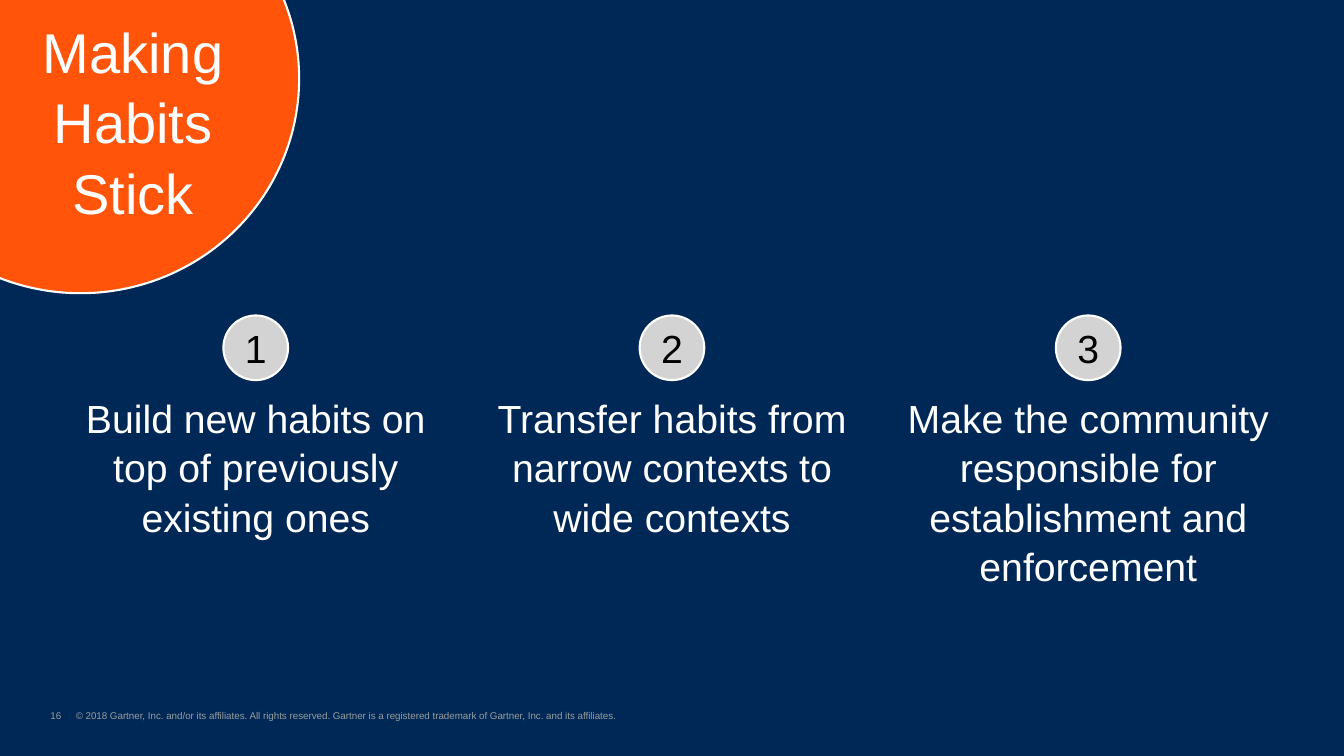
from math import acos, asin, cos, sin

from lxml import etree
from pptx import Presentation
from pptx.dml.color import RGBColor
from pptx.enum.shapes import MSO_SHAPE
from pptx.enum.text import MSO_ANCHOR, PP_ALIGN
from pptx.oxml.ns import qn
from pptx.util import Cm, Pt

OVAL = MSO_SHAPE.OVAL
MIDDLE, BOTTOM = MSO_ANCHOR.MIDDLE, MSO_ANCHOR.BOTTOM
CENTER, LEFT = PP_ALIGN.CENTER, PP_ALIGN.LEFT

NAVY, ORANGE, WHITE = "002856", "FF540A", "FFFFFF"
SILVER, GRAY, BLACK = "D3D3D3", "979D9D", "000000"

HABITS = [
    "Build new habits on top of previously existing ones",
    "Transfer habits from narrow contexts to wide contexts",
    "Make the community responsible for establishment and enforcement",
]
RIGHTS = ("© 2018 Gartner, Inc. and/or its affiliates. All rights reserved. "
          "Gartner is a registered trademark of Gartner, Inc. and its affiliates.")


def color(code):
    return RGBColor.from_string(code)


def paint(shape, fill):
    shape.shadow.inherit = False
    shape.fill.solid()
    shape.fill.fore_color.rgb = color(fill)
    shape.line.color.rgb = color(WHITE)
    shape.line.width = Pt(1.5)


def inset(frame, left, top, right, bottom):
    frame.margin_left, frame.margin_top = Cm(left), Cm(top)
    frame.margin_right, frame.margin_bottom = Cm(right), Cm(bottom)


def write(frame, runs, size, tint, align=CENTER, space=1.05):
    para = frame.paragraphs[0]
    para.alignment = align
    para.line_spacing = space
    for text in runs:
        run = para.add_run()
        run.text = text
        run.font.name = "Arial"
        run.font.size = Pt(size)
        run.font.color.rgb = color(tint)


# Title on a disc cut off by the slide's top left corner
def corner(slide, left, top, width, height):
    dx, dy = 2.11, 2.06  # disc centre inside the box
    rx, ry = width - dx, height - dy
    start, end = asin(-dy / ry), acos(-dx / rx)
    steps = 90
    turns = [start + (end - start) * i / steps for i in range(steps + 1)]
    arc = [(Cm(left + dx + rx * cos(t)), Cm(top + dy + ry * sin(t)))
           for t in turns]
    pen = slide.shapes.build_freeform(Cm(left), Cm(top))
    pen.add_line_segments(arc, close=True)
    disc = pen.convert_to_shape()
    paint(disc, ORANGE)
    frame = disc.text_frame
    frame.word_wrap = True
    frame.vertical_anchor = MIDDLE
    inset(frame, 0, 0, 0.76, 1.27)
    write(frame, ["Making Habits Stick"], 40, WHITE)


# Numbered circle above a centred statement
def habit(slide, number, text, left, top, width, height):
    size, drop = 1.63, 1.8
    box = slide.shapes.add_textbox(
        Cm(left), Cm(top + drop), Cm(width), Cm(height - drop))
    box.text_frame.word_wrap = True
    write(box.text_frame, [text], 28, WHITE)

    badge = slide.shapes.add_shape(
        OVAL, Cm(left + (width - size) / 2), Cm(top), Cm(size), Cm(size))
    paint(badge, SILVER)
    badge.text_frame.word_wrap = False
    badge.text_frame.vertical_anchor = MIDDLE
    write(badge.text_frame, [str(number)], 28, BLACK, space=1)


# Page number and rights line, parted by a tab stop
def footer(slide, left, top, width, height):
    box = slide.shapes.add_textbox(Cm(left), Cm(top), Cm(width), Cm(height))
    frame = box.text_frame
    frame.word_wrap = True
    frame.vertical_anchor = BOTTOM
    inset(frame, 0, 0, 0, 0)
    indent = Cm(0.64)
    props = frame.paragraphs[0]._p.get_or_add_pPr()
    props.set("marL", str(indent))
    props.set("indent", str(-indent))
    tabs = etree.SubElement(props, qn("a:tabLst"))
    etree.SubElement(tabs, qn("a:tab"), pos=str(indent), algn="l")
    write(frame, ["16", "\t" + RIGHTS], 7, GRAY, LEFT, 1)


def main():
    deck = Presentation()
    deck.slide_width, deck.slide_height = Cm(33.87), Cm(19.05)
    slide = deck.slides.add_slide(deck.slide_layouts[6])
    slide.background.fill.solid()
    slide.background.fill.fore_color.rgb = color(NAVY)

    footer(slide, 1.27, 17.88, 19.94, 0.3)
    corner(slide, -0.08, -0.08, 7.62, 7.47)
    for i, text in enumerate(HABITS):
        habit(slide, i + 1, text, 1.57 + 10.49 * i, 7.95, 9.75, 6.85)

    deck.save("out.pptx")


if __name__ == "__main__":
    main()
